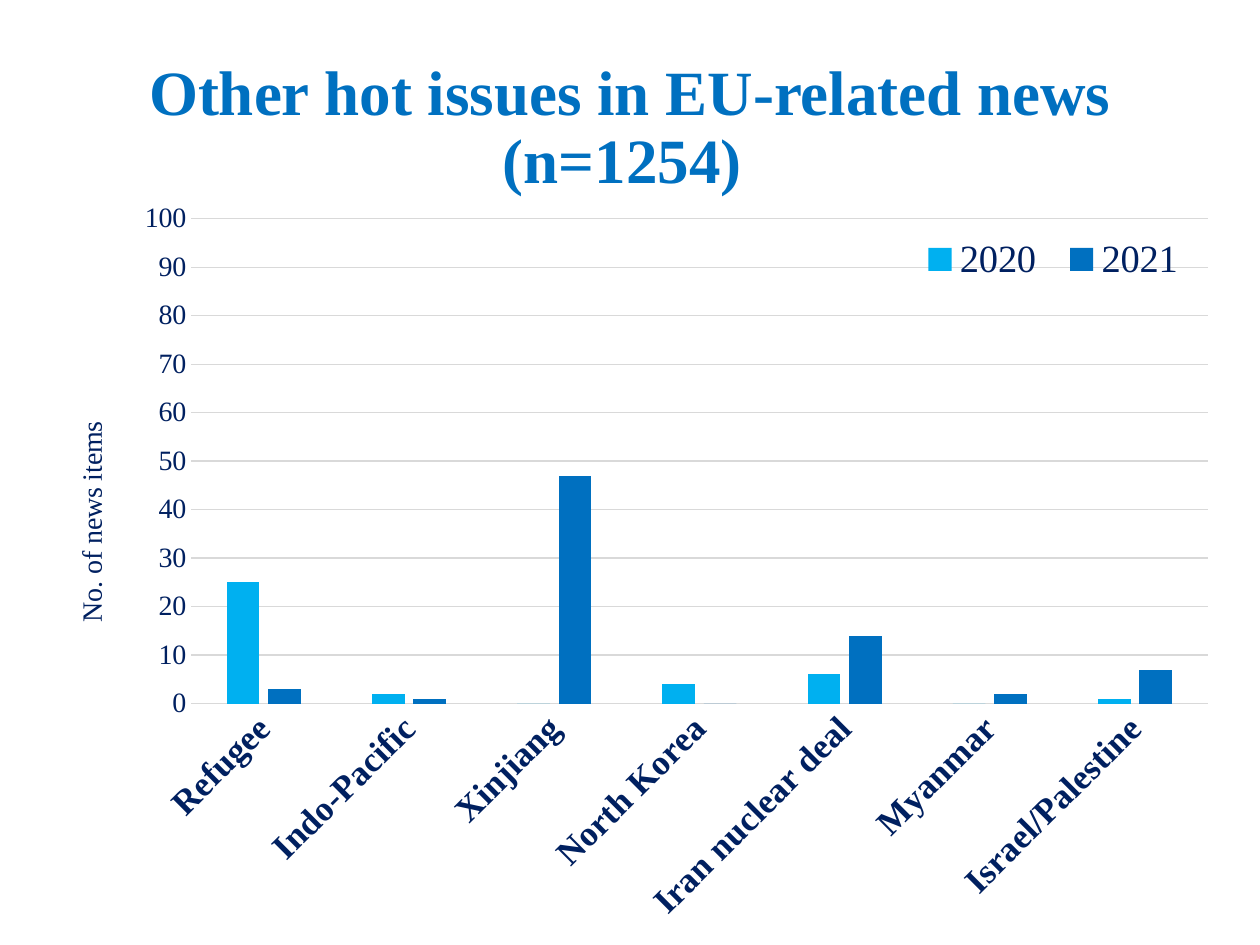
from lxml import etree
from pptx import Presentation
from pptx.chart.data import CategoryChartData
from pptx.dml.color import RGBColor
from pptx.enum.chart import XL_CHART_TYPE as ChartType, XL_LEGEND_POSITION as LegendPosition
from pptx.enum.chart import XL_TICK_MARK as TickMark
from pptx.enum.text import MSO_ANCHOR as Anchor, MSO_AUTO_SIZE as AutoSize, PP_ALIGN as Align
from pptx.oxml.ns import qn
from pptx.util import Inches, Pt

NAVY, BLUE, SKY, GREY = "002060", "0070C0", "00B0F0", "D9D9D9"


def style(font, size, color=NAVY, bold=False):
    font.name = "Times New Roman"
    font.size = Pt(size)
    font.bold = bold
    font.color.rgb = RGBColor.from_string(color)


def set_layout(parent, before, **values):
    """Place a chart part by fractions of the chart, ahead of the child named before."""
    for old in parent.findall(qn("c:layout")):
        parent.remove(old)
    layout = etree.Element(qn("c:layout"))
    manual = etree.SubElement(layout, qn("c:manualLayout"))
    for tag, value in values.items():
        etree.SubElement(manual, qn(f"c:{tag}")).set("val", str(value))
    parent.find(qn(before)).addprevious(layout)


deck = Presentation()
deck.slide_width, deck.slide_height = Inches(10), Inches(7.5)
page = deck.slides.add_slide(deck.slide_layouts[5])

# Title
title = page.shapes.title
title.left, title.top = Inches(0.69), Inches(0.63)
title.width, title.height = Inches(8.62), Inches(0.79)
frame = title.text_frame
frame.text = "Other hot issues in EU-related news (n=1254) "
frame.word_wrap = True
frame.auto_size = AutoSize.NONE
frame.vertical_anchor = Anchor.MIDDLE
para = frame.paragraphs[0]
para.alignment = Align.CENTER
para.line_spacing = 0.9
style(para.runs[0].font, 36, BLUE, bold=True)

# Chart
data = CategoryChartData()
data.categories = ["Refugee", "Indo-Pacific", "Xinjiang", "North Korea",
                   "Iran nuclear deal", "Myanmar", "Israel/Palestine"]
data.add_series("2020", [25, 2, 0, 4, 6, 0, 1])
data.add_series("2021", [3, 1, 47, 0, 14, 2, 7])
chart = page.shapes.add_chart(ChartType.COLUMN_CLUSTERED, Inches(0.35), Inches(1.42),
                              Inches(9.65), Inches(6.08), data).chart
chart.has_title = False
style(chart.font, 16)

plot = chart.plots[0]
plot.vary_by_categories = False
plot.gap_width, plot.overlap = 219, -27
for series, color in zip(plot.series, [SKY, BLUE]):
    series.format.fill.solid()
    series.format.fill.fore_color.rgb = RGBColor.from_string(color)
    series.invert_if_negative = False

# Axes
categories, values = chart.category_axis, chart.value_axis
for axis, size, bold in [(categories, 20, True), (values, 16, False)]:
    axis.major_tick_mark = axis.minor_tick_mark = TickMark.NONE
    style(axis.tick_labels.font, size, bold=bold)
categories.tick_labels.font._element.getparent().getparent().getparent().find(
    qn("a:bodyPr")).set("rot", "-2700000")
values.minimum_scale, values.maximum_scale, values.major_unit = 0, 100, 10
values.has_major_gridlines = True
values.format.line.fill.background()
for line in [categories.format.line, values.major_gridlines.format.line]:
    line.width = Pt(0.75)
    line.color.rgb = RGBColor.from_string(GREY)

axis_title = values.axis_title
axis_title.text_frame.text = "No. of news items"
style(axis_title.text_frame.paragraphs[0].runs[0].font, 16)
body = axis_title.text_frame._txBody.find(qn("a:bodyPr"))
body.set("rot", "-5400000")
body.set("vert", "horz")

# Legend
chart.has_legend = True
legend = chart.legend
legend.position = LegendPosition.TOP
legend.include_in_layout = False
style(legend.font, 22)

# Manual positions
plot_area = plot._element.getparent()
set_layout(plot_area, "c:barChart", layoutTarget="inner", xMode="edge", yMode="edge",
           x=0.121, y=0.052, w=0.836, h=0.633)
set_layout(axis_title._element, "c:overlay", xMode="edge", yMode="edge", x=0.02, y=0.31)
set_layout(legend._element, "c:overlay", xMode="edge", yMode="edge",
           x=0.71, y=0.06, w=0.24, h=0.09)

deck.save("out.pptx")
